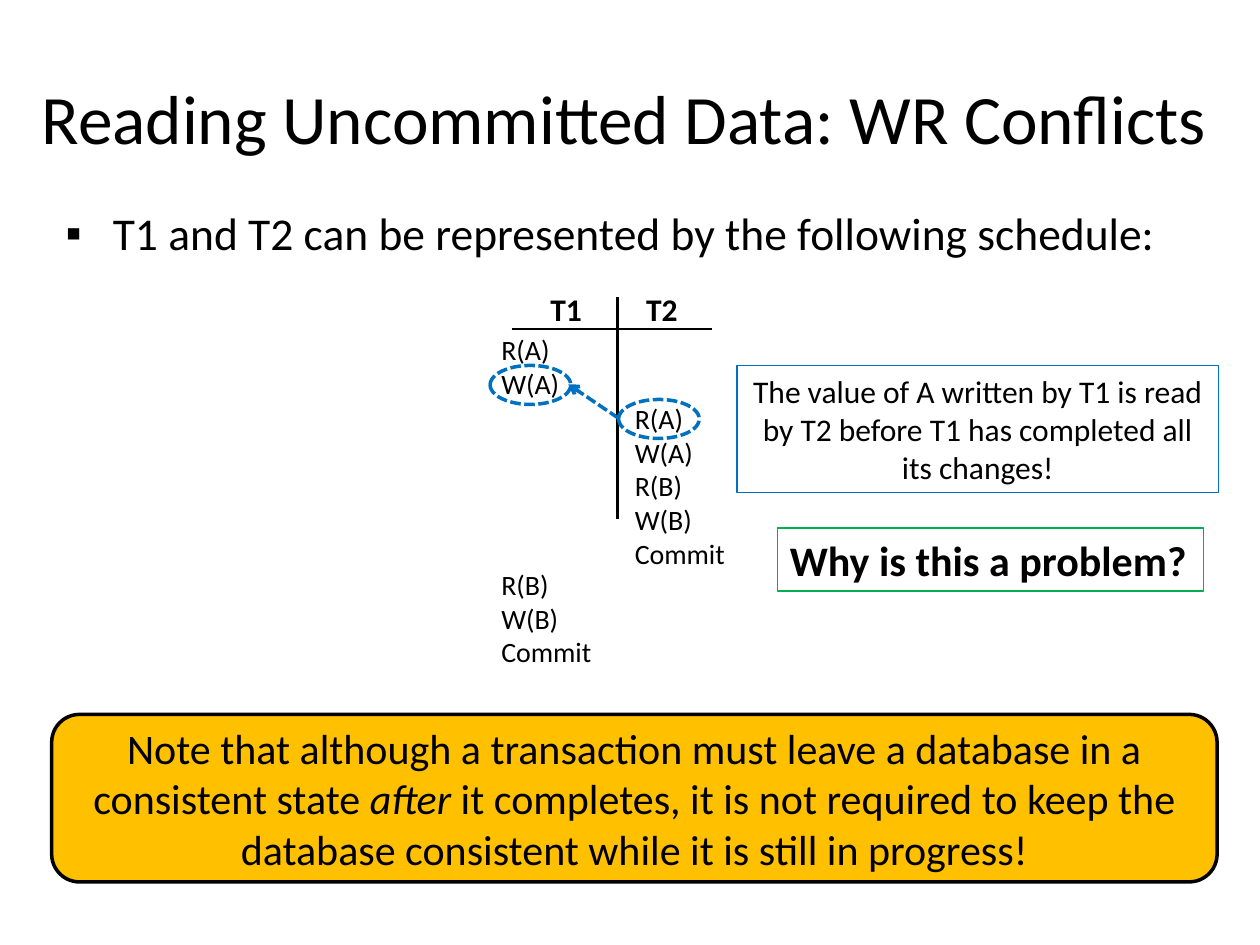
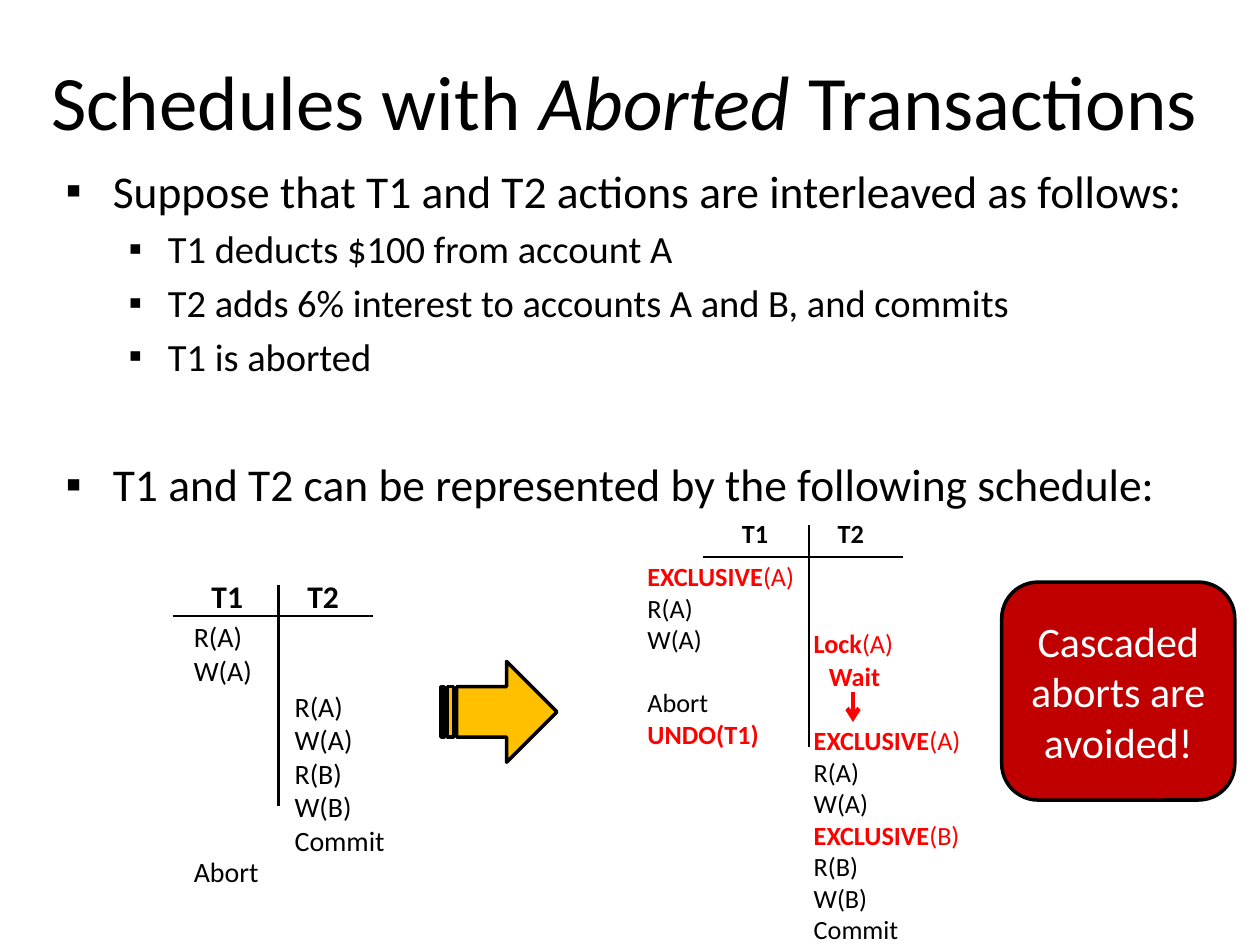
from dataclasses import dataclass
from typing import Any, NamedTuple, Optional

import lxml.etree
import pptx
import pptx.dml.color
import pptx.enum.dml
import pptx.enum.shapes
import pptx.enum.text
import pptx.oxml.ns
import pptx.util

RGB = pptx.dml.color.RGBColor
BLACK = RGB(0x00, 0x00, 0x00)
WHITE = RGB(0xFF, 0xFF, 0xFF)
RED = RGB(0xFF, 0x00, 0x00)
BLUE = RGB(0x00, 0x70, 0xC0)
GREEN = RGB(0x00, 0xB0, 0x50)
GOLD = RGB(0xFF, 0xC0, 0x00)
CRIMSON = RGB(0xC0, 0x00, 0x00)

FONT = "Calibri"
SCALE = 9144  # EMU in one px, 100 px to the inch
PITCH = 1.2  # line height as a share of the font size
KIND = pptx.enum.shapes.MSO_SHAPE
ALIGN = pptx.enum.text.PP_ALIGN
DASH = pptx.enum.dml.MSO_LINE.SQUARE_DOT


class Box(NamedTuple):
    x: int
    y: int
    w: int
    h: int


class Run(NamedTuple):
    text: str
    bold: bool = False
    italic: bool = False
    color: RGB = BLACK


@dataclass(frozen=True)
class Line:
    runs: tuple[Run, ...]
    skip: float = 0  # empty rows above
    level: int = 0
    size: float = 0  # 0 takes the size of the block


@dataclass(frozen=True)
class Column:
    x: int
    y: int
    w: int
    lines: list[Line]


@dataclass(frozen=True)
class Plan:
    """A schedule: a cross at (x, y), two heads and two columns."""
    x: int
    y: int
    size: int
    head: Box  # T1 head, as offsets from the cross
    cols: tuple[Column, Column]
    rows: int = 16


@dataclass(frozen=True)
class Panel:
    kind: Any
    box: Box
    edge: RGB = BLACK
    width: float = 2
    fill: Optional[RGB] = None
    dash: Any = None
    runs: tuple[Run, ...] = ()
    size: int = 24
    align: Any = ALIGN.CENTER
    wrap: bool = True


# Basic helpers
def px(value: float) -> int:
    return round(value * SCALE)


def apply(item: Any, values: dict[str, Any]) -> None:
    for name, value in values.items():
        setattr(item, name, value)


def place(item: Any, box: Box) -> None:
    apply(item, dict(zip(("left", "top", "width", "height"), map(px, box))))


def child(parent: Any, tag: str, **values: str) -> None:
    lxml.etree.SubElement(parent, pptx.oxml.ns.qn(tag), values)


def plain(*texts: str) -> list[Line]:
    return [Line((Run(text),)) for text in texts]


def lock(item: str) -> Line:
    return Line((Run("EXCLUSIVE", True, color=RED), Run(f"({item})", color=RED)))


def write(frame: Any, lines: list[Line], size: float, align: Any = None) -> None:
    for i, line in enumerate(lines):
        para = frame.paragraphs[0] if i == 0 else frame.add_paragraph()
        points = line.size or size
        apply(para, {"level": line.level, "alignment": align})
        if i and line.skip:
            para.space_before = pptx.util.Pt(round(line.skip * PITCH * points, 1))
        for part in line.runs:
            for k, text in enumerate(part.text.split("\n")):
                if k:
                    para.add_line_break()
                run = para.add_run()
                run.text = text
                apply(run.font, {"name": FONT, "size": pptx.util.Pt(points),
                                 "bold": part.bold, "italic": part.italic})
                run.font.color.rgb = part.color


# Slide parts
def start(deck: Any, title: Box, runs: tuple[Run, ...], size: float,
          body: Box, lines: list[Line]) -> Any:
    slide = deck.slides.add_slide(deck.slide_layouts[1])
    head, text = slide.shapes.title, slide.placeholders[1]
    for item, box in ((head, title), (text, body)):
        place(item, box)
        item.text_frame.auto_size = pptx.enum.text.MSO_AUTO_SIZE.NONE
    write(head.text_frame, [Line(runs)], size, ALIGN.CENTER)
    write(text.text_frame, lines, 26)
    for para in text.text_frame.paragraphs:
        props = para._p.get_or_add_pPr()
        child(props, "a:buFont", typeface="Arial")
        child(props, "a:buChar", char="▪")
    return slide


def label(slide: Any, box: Box, lines: list[Line], size: float) -> None:
    item = slide.shapes.add_textbox(*map(px, box))
    item.text_frame.word_wrap = False
    write(item.text_frame, lines, size)


def rule(slide: Any, ends: tuple[int, int, int, int], color: RGB = BLACK,
         width: float = 1.5, dash: Any = None, arrow: bool = False) -> None:
    item = slide.shapes.add_connector(
        pptx.enum.shapes.MSO_CONNECTOR.STRAIGHT, *map(px, ends))
    item.line.color.rgb = color
    apply(item.line, {"width": pptx.util.Pt(width), "dash_style": dash})
    if arrow:
        child(item.line._get_or_add_ln(), "a:tailEnd", type="arrow")
    child(item._element.spPr, "a:effectLst")


def panel(slide: Any, spec_: Panel) -> None:
    item = slide.shapes.add_shape(spec_.kind, *map(px, spec_.box))
    item.shadow.inherit = False
    if spec_.fill is None:
        item.fill.background()
    else:
        item.fill.solid()
        item.fill.fore_color.rgb = spec_.fill
    item.line.color.rgb = spec_.edge
    apply(item.line, {"width": pptx.util.Pt(spec_.width), "dash_style": spec_.dash})
    if spec_.runs:
        item.text_frame.word_wrap = spec_.wrap
        write(item.text_frame, [Line(spec_.runs)], spec_.size, spec_.align)


def draw(slide: Any, plan: Plan) -> None:
    x, y, head = plan.x, plan.y, plan.head
    rule(slide, (x, y, x, y + 176))
    rule(slide, (x - 84, y + 25, x + 75, y + 25))
    for i, name in enumerate(("T1", "T2")):
        box = Box(x + head.x + 76 * i, y + head.y, head.w, head.h)
        label(slide, box, [Line((Run(name, True),))], plan.size)
    row = plan.rows * PITCH / 72 * 100
    for col in plan.cols:
        top = col.y + round(col.lines[0].skip * row)
        high = sum(1 + line.skip for line in col.lines) - col.lines[0].skip
        label(slide, Box(col.x, top, col.w, round(high * row) + 10),
              col.lines, plan.rows)


# Text shared by the schedules
FOLLOW = "T1 and T2 can be represented by the following schedule:"
FIRST = plain("R(A)", "W(A)")
SECOND = [Line((Run("R(A)"),), skip=2), *plain("W(A)", "R(B)", "W(B)", "Commit")]
HEAD = Box(-63, -11, 45, 40)
SMALL = Box(-63, -11, 41, 35)


def conflict(deck: Any) -> None:
    slide = start(deck, Box(8, 30, 975, 125),
                  (Run("Reading Uncommitted Data: WR Conflicts"),), 39.6,
                  Box(42, 158, 945, 575), plain(FOLLOW))
    rest = [Line((Run("R(B)"),), skip=5), *plain("W(B)", "Commit")]
    draw(slide, Plan(490, 236, 18, HEAD, (
        Column(388, 259, 92, FIRST + rest), Column(494, 261, 92, SECOND))))

    # Dirty read marks
    for x, y in ((491, 317), (389, 290)):
        panel(slide, Panel(KIND.OVAL, Box(x, y, 64, 31), BLUE, dash=DASH))
    rule(slide, (491, 332, 451, 305), BLUE, 2, DASH, True)

    # Remarks
    value = ("The value of A written by T1 is read\n"
             "by T2 before T1 has completed all\nits changes!")
    note = (Run("Note that although a transaction must leave a database in a "
                "consistent state "), Run("after", italic=True),
            Run(" it completes, it is not required to keep the database "
                "consistent while it is still in progress!"))
    for item in (
        Panel(KIND.RECTANGLE, Box(585, 290, 382, 101), BLUE, 0.75,
              runs=(Run(value),), size=18, wrap=False),
        Panel(KIND.RECTANGLE, Box(617, 419, 338, 50), GREEN, 0.75,
              runs=(Run("Why is this a problem?", True),),
              align=ALIGN.LEFT, wrap=False),
        Panel(KIND.ROUNDED_RECTANGLE, Box(41, 567, 925, 133), fill=GOLD, runs=note),
    ):
        panel(slide, item)


def aborted(deck: Any) -> None:
    steps = ("T1 deducts $100 from account A",
             "T2 adds 6% interest to accounts A and B, and commits",
             "T1 is aborted")
    slide = start(deck, Box(8, 17, 975, 125),
                  (Run("Schedules with "), Run("Aborted", italic=True),
                   Run(" Transactions")), 44,
                  Box(42, 124, 945, 575),
                  [*plain("Suppose that T1 and T2 actions are interleaved as follows:"),
                   *(Line((Run(step),), level=1, size=22) for step in steps),
                   Line((Run(FOLLOW),), skip=1.42)])

    # Schedule before and after locking
    draw(slide, Plan(221, 464, 18, HEAD, (
        Column(144, 487, 72, FIRST + [Line((Run("Abort"),), skip=5)]),
        Column(224, 489, 92, SECOND))))
    panel(slide, Panel(KIND.STRIPED_RIGHT_ARROW, Box(350, 525, 92, 80), fill=GOLD))
    left = [lock("A"), *FIRST, Line((Run("Abort"),), skip=1),
            Line((Run("UNDO(T1)", True, color=RED),))]
    right = [Line(lock("A").runs, skip=4), *FIRST, lock("B"),
             *plain("R(B)", "W(B)", "Commit")]
    draw(slide, Plan(642, 417, 15, SMALL, (
        Column(504, 440, 138, left), Column(636, 470, 138, right)), 15))

    # Waiting for the lock
    label(slide, Box(636, 493, 84, 35),
          [Line((Run("Lock", True, color=RED), Run("(A)", color=RED)))], 15)
    label(slide, Box(648, 519, 61, 35), [Line((Run("Wait", True, color=RED),))], 15)
    rule(slide, (677, 549, 677, 573), RED, 2.5, arrow=True)
    panel(slide, Panel(KIND.ROUNDED_RECTANGLE, Box(795, 462, 185, 173), fill=CRIMSON,
                       runs=(Run("Cascaded aborts are avoided!", color=WHITE),)))


def main() -> None:
    deck = pptx.Presentation()
    apply(deck, {"slide_width": px(1000), "slide_height": px(750)})
    conflict(deck)
    aborted(deck)
    deck.save("out.pptx")


if __name__ == "__main__":
    main()
